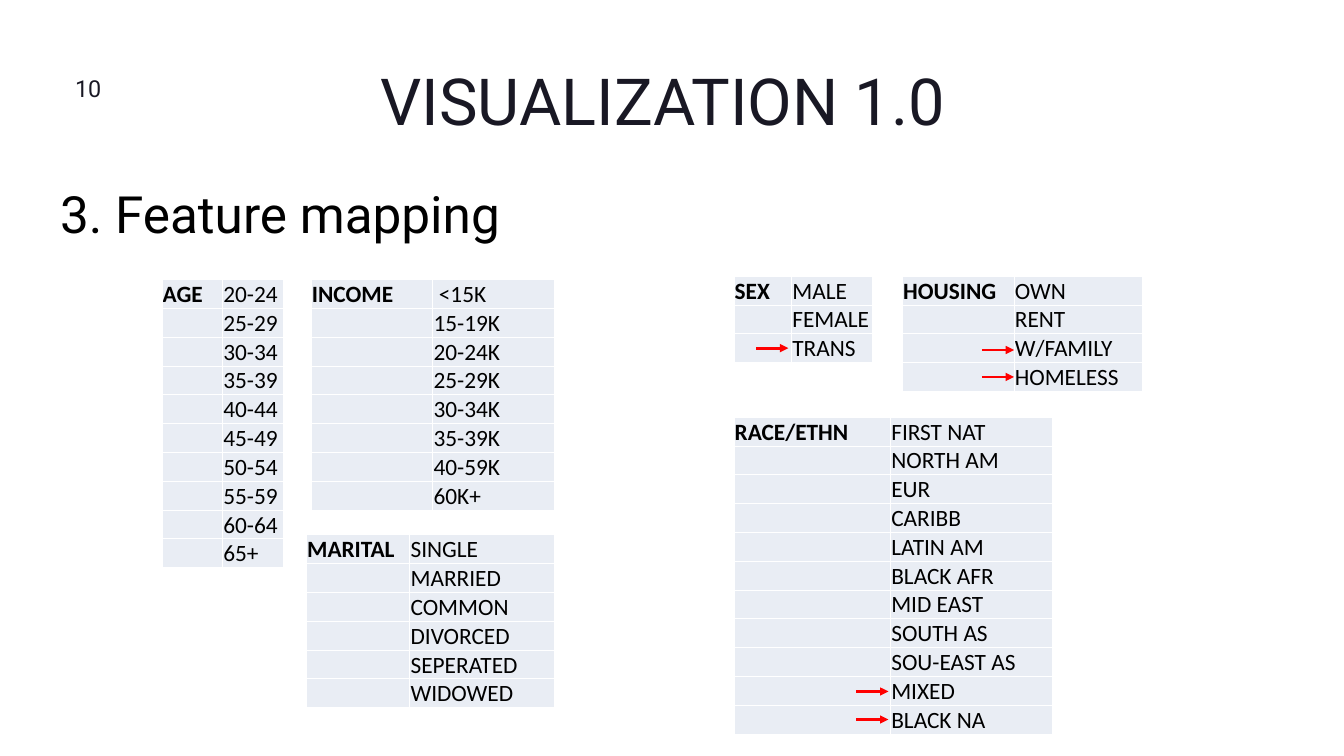
from lxml.etree import SubElement
from pptx import Presentation
from pptx.dml.color import RGBColor
from pptx.enum.shapes import MSO_CONNECTOR
from pptx.enum.text import MSO_ANCHOR, PP_ALIGN
from pptx.oxml.ns import qn
from pptx.util import Cm, Pt

ROW_HEIGHT = 1.08
ARROW_LENGTH = 1.22
CELL_FORMAT = {
    "margin_left": Cm(0.03),
    "margin_right": Cm(0.03),
    "margin_top": Cm(0.03),
    "margin_bottom": Cm(0),
}
BOX_FORMAT = dict.fromkeys(
    ("margin_left", "margin_top", "margin_right", "margin_bottom"), Cm(0)
) | {"word_wrap": True}

TABLES = [
    (6.12, 10.57, (2.29, 2.29), MSO_ANCHOR.MIDDLE, "AGE",
     ["20-24", "25-29", "30-34", "35-39", "40-44",
      "45-49", "50-54", "55-59", "60-64", "65+"]),
    (11.76, 10.57, (4.6, 4.6), MSO_ANCHOR.MIDDLE, "INCOME",
     [" <15K", "15-19K", "20-24K", "25-29K", "30-34K", "35-39K", "40-59K", "60K+"]),
    (11.58, 20.22, (3.91, 5.46), MSO_ANCHOR.TOP, "MARITAL",
     ["SINGLE", "MARRIED", "COMMON", "DIVORCED", "SEPERATED", "WIDOWED"]),
    (27.74, 10.44, (2.18, 3.05), MSO_ANCHOR.MIDDLE, "SEX",
     ["MALE", "FEMALE", "TRANS"]),
    (34.11, 10.44, (4.22, 4.85), MSO_ANCHOR.TOP, "HOUSING",
     ["OWN", "RENT", "W/FAMILY", "HOMELESS"]),
    (27.74, 15.77, (5.92, 6.1), MSO_ANCHOR.TOP, "RACE/ETHN",
     ["FIRST NAT", "NORTH AM", "EUR", "CARIBB", "LATIN AM", "BLACK AFR",
      "MID EAST", "SOUTH AS", "SOU-EAST AS", "MIXED", "BLACK NA"]),
]
ARROWS = [(28.58, 13.16), (37.11, 14.25), (37.11, 13.23), (32.36, 26.14), (32.36, 27.2)]


def color(value):
    """Turn a hex string into a colour."""
    return RGBColor.from_string(value)


def apply(target, values):
    """Set each attribute of the target from a dict."""
    for name, value in values.items():
        setattr(target, name, value)


def add_run(p, text, size, font, hex_color, bold=False):
    """Add a formatted run to a paragraph."""
    r = p.add_run()
    r.text = text
    apply(r.font, {"size": Pt(size), "name": font, "bold": bold})
    r.font.color.rgb = color(hex_color)


def add_text(s, box, text, size, hex_color, spacing, align=PP_ALIGN.LEFT, indent=0):
    """Add a one-line text box without padding."""
    sp = s.shapes.add_textbox(*map(Cm, box))
    tf = sp.text_frame
    apply(tf, BOX_FORMAT | {"margin_left": Cm(indent)})
    p = tf.paragraphs[0]
    apply(p, {"alignment": align, "line_spacing": Pt(spacing)})
    add_run(p, text, size, "Roboto", hex_color)


def add_borders(cell, hex_color):
    """Draw a one-point line on all four sides of a cell."""
    tc_pr = cell._tc.get_or_add_tcPr()
    for side in ("a:lnL", "a:lnR", "a:lnT", "a:lnB"):
        ln = SubElement(tc_pr, qn(side), w=str(Pt(1)))
        fill = SubElement(ln, qn("a:solidFill"))
        SubElement(fill, qn("a:srgbClr"), val=hex_color)


def add_feature_table(s, left, top, widths, anchor, feature, values):
    """Add a table with a feature name and its list of values."""
    frame = s.shapes.add_table(
        len(values), 2, Cm(left), Cm(top), Cm(sum(widths)), Cm(ROW_HEIGHT * len(values))
    )
    table = frame.table
    apply(table, {"first_row": False, "horz_banding": False})
    for column, width in zip(table.columns, widths):
        column.width = Cm(width)
    for i, value in enumerate(values):
        table.rows[i].height = Cm(ROW_HEIGHT)
        for j, text in enumerate((feature if i == 0 else "", value)):
            cell = table.cell(i, j)
            apply(cell, CELL_FORMAT | {"vertical_anchor": anchor})
            add_borders(cell, "FFFFFF")
            cell.fill.solid()
            cell.fill.fore_color.rgb = color("E9EDF4")
            if text:
                p = cell.text_frame.paragraphs[0]
                add_run(p, text, 25, "Calibri", "000000", bold=j == 0)


def add_arrow(s, x, y):
    """Add a red arrow pointing right at a value."""
    line = s.shapes.add_connector(
        MSO_CONNECTOR.STRAIGHT, Cm(x), Cm(y), Cm(x + ARROW_LENGTH), Cm(y)
    )
    line.line.width = Pt(3)
    line.line.color.rgb = color("FF0000")
    SubElement(line.line._get_or_add_ln(), qn("a:tailEnd"), type="triangle")
    SubElement(line._element.spPr, qn("a:effectLst"))


def main():
    """Build the feature mapping slide."""
    prs = Presentation()
    apply(prs, {"slide_width": Cm(50.8), "slide_height": Cm(28.58)})
    s = prs.slides.add_slide(prs.slide_layouts[6])
    add_text(s, (10.49, 2.51, 28.52, 2.79), " VISUALIZATION 1.0", 69.5, "191824", 77,
             align=PP_ALIGN.CENTER)
    add_text(s, (2.84, 2.82, 3.53, 1.09), "10", 25, "191824", 30)
    add_text(s, (1.27, 7.72, 20.8, 1.73), "3. Feature mapping", 55, "000000", 42.9, indent=1)
    for table in TABLES:
        add_feature_table(s, *table)
    for arrow in ARROWS:
        add_arrow(s, *arrow)
    prs.save("out.pptx")


if __name__ == "__main__":
    main()
